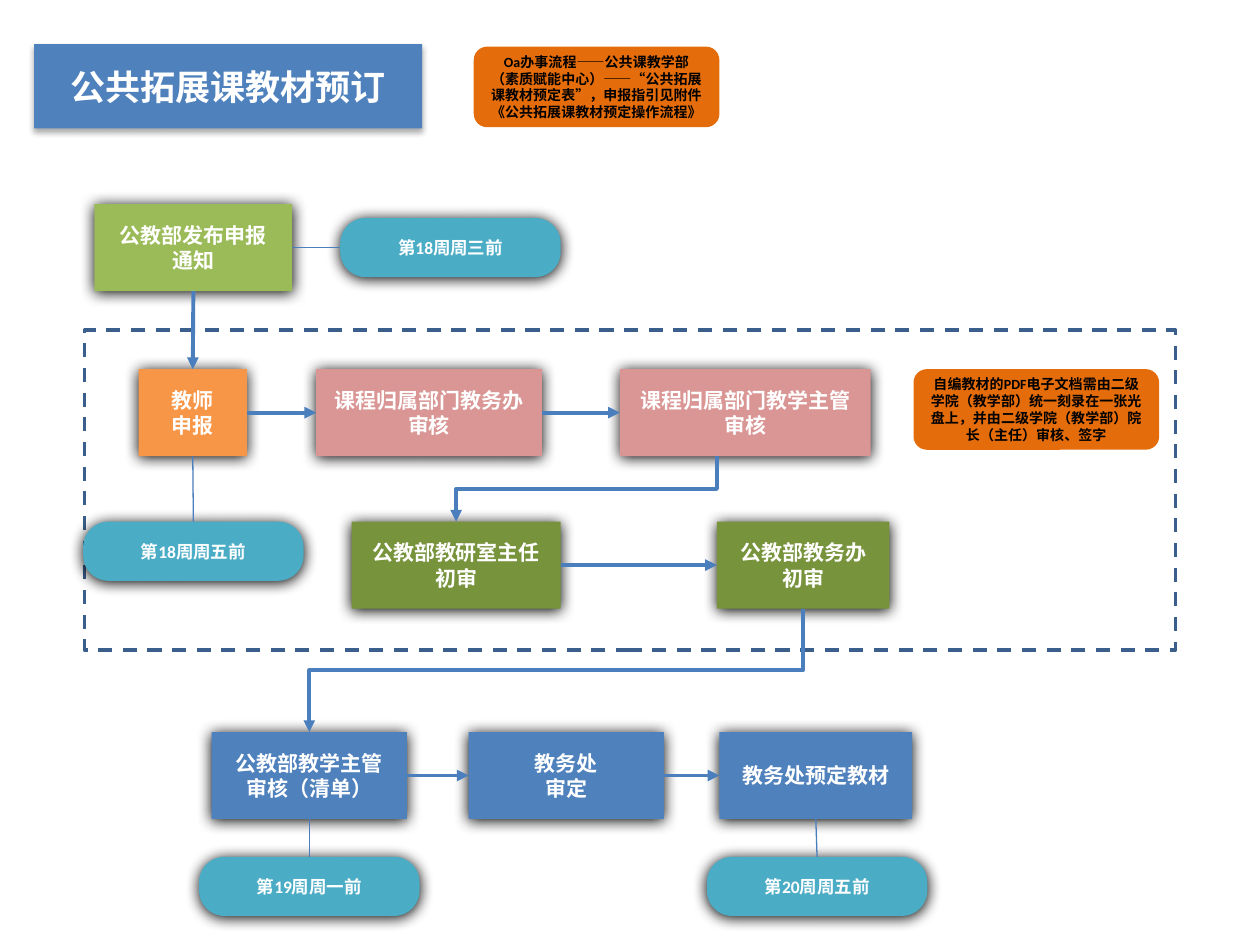
from lxml import etree
from pptx import Presentation
from pptx.dml.color import RGBColor
from pptx.enum.dml import MSO_LINE
from pptx.enum.shapes import MSO_CONNECTOR, MSO_SHAPE
from pptx.enum.text import MSO_ANCHOR, PP_ALIGN
from pptx.oxml.ns import qn
from pptx.util import Inches, Pt

RECTANGLE, ROUNDED = MSO_SHAPE.RECTANGLE, MSO_SHAPE.ROUNDED_RECTANGLE
STRAIGHT, ELBOW = MSO_CONNECTOR.STRAIGHT, MSO_CONNECTOR.ELBOW
DASH = MSO_LINE.DASH
MIDDLE, CENTER = MSO_ANCHOR.MIDDLE, PP_ALIGN.CENTER
TOP, LEFT, BOTTOM, RIGHT = range(4)

WHITE = RGBColor(0xFF, 0xFF, 0xFF)
BLACK = RGBColor(0, 0, 0)
BLUE = RGBColor(0x4F, 0x81, 0xBD)
LIGHT_GREEN = RGBColor(0x9B, 0xBB, 0x59)
DARK_GREEN = RGBColor(0x77, 0x93, 0x3C)
ORANGE = RGBColor(0xF7, 0x96, 0x46)
DARK_ORANGE = RGBColor(0xE4, 0x6C, 0x0A)
PINK = RGBColor(0xD9, 0x96, 0x94)
TEAL = RGBColor(0x4B, 0xAC, 0xC6)
FRAME_BLUE = RGBColor(0x3A, 0x5F, 0x8C)
LINE_BLUE = RGBColor(0x4B, 0x7E, 0xBC)

FONT = "Calibri"
ROW_TOPS = (1.62, 2.93, 4.14, 5.81)
STEP_HEIGHT = 0.69
DEADLINE_WIDTH, DEADLINE_HEIGHT = 1.75, 0.47
NOTE_WIDTH, NOTE_HEIGHT = 1.95, 0.64
STEPS = {
    "notice": (0, 0.75, 1.57, LIGHT_GREEN, "公教部发布申报\n通知"),
    "teacher": (1, 1.1, 0.86, ORANGE, "教师\n申报"),
    "office": (1, 2.51, 1.79, PINK, "课程归属部门教务办\n审核"),
    "supervisor": (1, 4.92, 1.99, PINK, "课程归属部门教学主管审核"),
    "director": (2, 2.79, 1.66, DARK_GREEN, "公教部教研室主任\n初审"),
    "first_check": (2, 5.69, 1.37, DARK_GREEN, "公教部教务办\n初审"),
    "list_check": (3, 1.68, 1.55, BLUE, "公教部教学主管\n审核（清单）"),
    "approval": (3, 3.72, 1.55, BLUE, "教务处\n审定"),
    "booking": (3, 5.71, 1.53, BLUE, "教务处预定教材"),
}
DEADLINES = {
    "notice": (2.7, 1.73, "第18周周三前"),
    "teacher": (0.66, 4.14, "第18周周五前"),
    "list_check": (1.58, 6.8, "第19周周一前"),
    "booking": (5.61, 6.8, "第20周周五前"),
}
NOTES = (
    (7.25, 2.93, "自编教材的PDF电子文档需由二级学院（教学部）统一刻录在一张光盘上，"
                 "并由二级学院（教学部）院长（主任）审核、签字"),
    (3.76, 0.37, "Oa办事流程——公共课教学部（素质赋能中心）——“公共拓展课教材预定表”，"
                 "申报指引见附件《公共拓展课教材预定操作流程》"),
)
ROW_ARROWS = (
    ("teacher", "office"), ("office", "supervisor"), ("director", "first_check"),
    ("list_check", "approval"), ("approval", "booking"),
)


def add_shadow(shape, blur, distance, opacity):
    """Give the shape a black shadow that falls straight down."""
    effects = shape._element.spPr.find(qn("a:effectLst"))
    shadow = etree.SubElement(effects, qn("a:outerShdw"), blurRad=str(Pt(blur)),
                              dist=str(Pt(distance)), dir="5400000", rotWithShape="0")
    color = etree.SubElement(shadow, qn("a:srgbClr"), val="000000")
    etree.SubElement(color, qn("a:alpha"), val=str(opacity * 1000))


def add_box(slide, kind, bounds, fill, text, size, color=WHITE):
    """Add a filled shape with bold centred text."""
    shape = slide.shapes.add_shape(kind, *map(Inches, bounds))
    shape.shadow.inherit = False
    shape.fill.solid()
    shape.fill.fore_color.rgb = fill
    shape.line.fill.background()
    shape.text_frame.text = text
    shape.text_frame.word_wrap = True
    shape.text_frame.vertical_anchor = MIDDLE
    for paragraph in shape.text_frame.paragraphs:
        paragraph.alignment = CENTER
        for run in paragraph.runs:
            run.font.name, run.font.size, run.font.bold = FONT, Pt(size), True
            run.font.color.rgb = color
    return shape


def add_step(slide, row, left, width, fill, text):
    """Add one step of the flow on its row."""
    bounds = (left, ROW_TOPS[row], width, STEP_HEIGHT)
    shape = add_box(slide, RECTANGLE, bounds, fill, text, 12)
    add_shadow(shape, 8.5, 1, 100)
    return shape


def add_deadline(slide, left, top, text):
    """Add a rounded deadline label."""
    bounds = (left, top, DEADLINE_WIDTH, DEADLINE_HEIGHT)
    shape = add_box(slide, ROUNDED, bounds, TEAL, text, 10)
    shape.adjustments[0] = 0.43
    add_shadow(shape, 8.5, 1, 100)
    return shape


def add_frame(slide):
    """Add the dashed frame round the review stage."""
    frame = slide.shapes.add_shape(RECTANGLE, *map(Inches, (0.67, 2.62, 8.66, 2.54)))
    frame.shadow.inherit = False
    frame.fill.background()
    frame.line.color.rgb = FRAME_BLUE
    frame.line.width = Pt(2)
    frame.line.dash_style = DASH


def add_link(slide, start, start_side, end, end_side, width=2.25, kind=STRAIGHT):
    """Join two shapes by their sides, with an arrowhead on thick lines."""
    connector = slide.shapes.add_connector(kind, 0, 0, 0, 0)
    connector.begin_connect(start, start_side)
    connector.end_connect(end, end_side)
    connector.line.color.rgb = LINE_BLUE
    connector.line.width = Pt(width)
    properties = connector._element.spPr
    if width > 1:
        etree.SubElement(properties.find(qn("a:ln")), qn("a:tailEnd"), type="triangle")
    etree.SubElement(properties, qn("a:effectLst"))
    return connector


def turn_down(connector, begin_x):
    """Turn an elbow so that it leaves downwards and ends to the lower left."""
    end_x, begin_y, end_y = connector.end_x, connector.begin_y, connector.end_y
    across, down = begin_x - end_x, end_y - begin_y
    transform = connector._element.spPr.find(qn("a:xfrm"))
    transform.attrib.clear()
    transform.set("rot", "5400000")
    connector.left = (begin_x + end_x - down) // 2
    connector.top = (begin_y + end_y - across) // 2
    connector.width, connector.height = down, across


def main():
    """Build the textbook ordering flow."""
    presentation = Presentation()
    presentation.slide_width, presentation.slide_height = Inches(10), Inches(7.5)
    slide = presentation.slides.add_slide(presentation.slide_layouts[6])

    title = add_box(slide, RECTANGLE, (0.27, 0.35, 3.08, 0.67), BLUE, "公共拓展课教材预订", 20)
    add_shadow(title, 3.5, 2.2, 32)
    add_frame(slide)
    steps = {name: add_step(slide, *step) for name, step in STEPS.items()}
    for name, deadline in DEADLINES.items():
        label = add_deadline(slide, *deadline)
        sides = (RIGHT, LEFT) if name == "notice" else (BOTTOM, TOP)
        add_link(slide, steps[name], sides[0], label, sides[1], 0.75)
    for left, top, text in NOTES:
        add_box(slide, ROUNDED, (left, top, NOTE_WIDTH, NOTE_HEIGHT), DARK_ORANGE, text, 8, BLACK)

    for start, end in ROW_ARROWS:
        add_link(slide, steps[start], RIGHT, steps[end], LEFT)
    add_link(slide, steps["notice"], BOTTOM, steps["teacher"], TOP)
    to_director = add_link(slide, steps["supervisor"], BOTTOM, steps["director"], TOP, kind=ELBOW)
    turn_down(to_director, steps["first_check"].left)
    to_list = add_link(slide, steps["first_check"], BOTTOM, steps["list_check"], TOP, kind=ELBOW)
    turn_down(to_list, to_list.begin_x)

    presentation.save("out.pptx")


if __name__ == "__main__":
    main()
